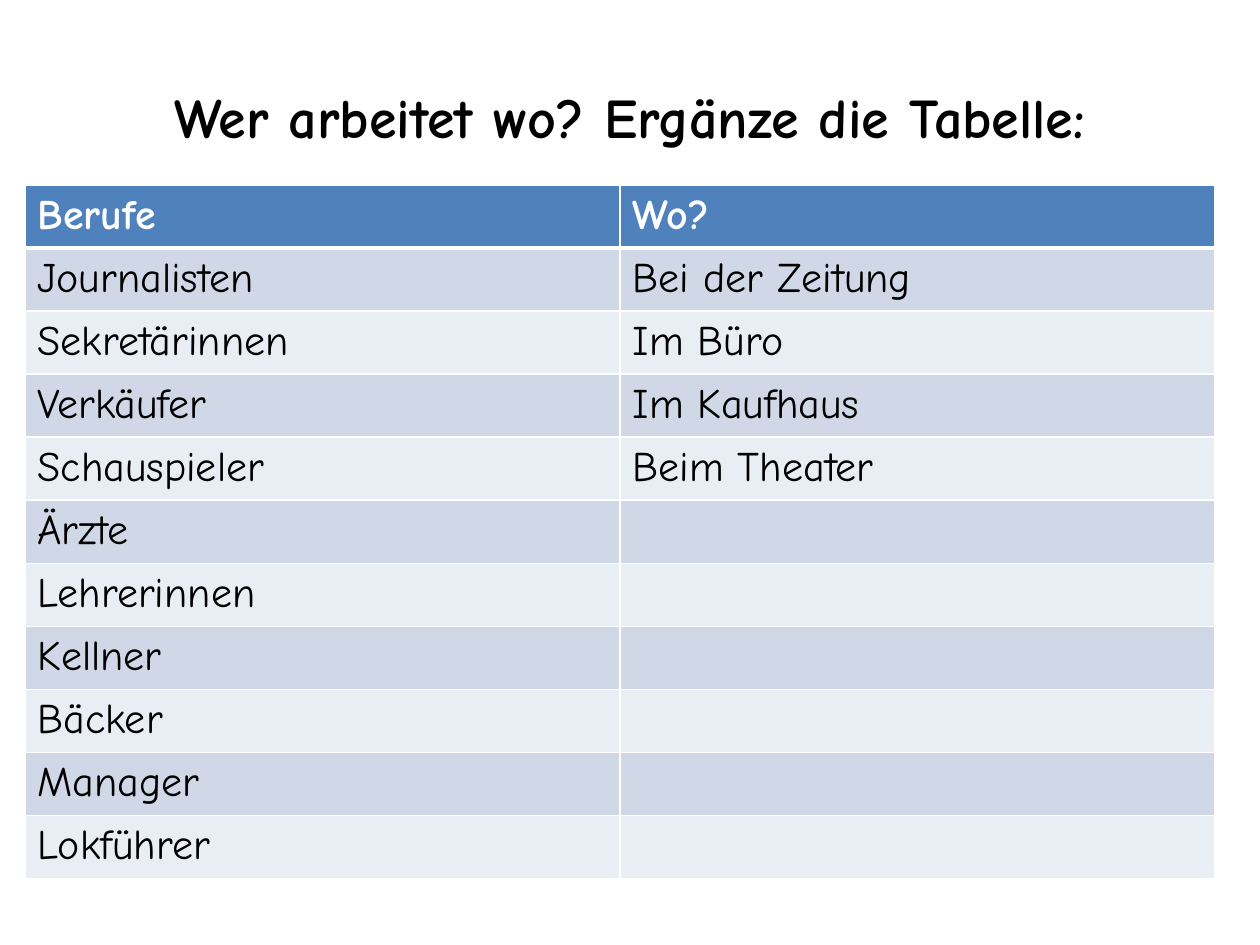
from typing import NamedTuple

from lxml import etree
from pptx import Presentation
from pptx.dml.color import RGBColor
from pptx.enum.text import MSO_ANCHOR, PP_ALIGN
from pptx.oxml.ns import qn
from pptx.util import Pt

CENTER = PP_ALIGN.CENTER
MIDDLE = MSO_ANCHOR.MIDDLE
EMU_PER_PX = 914400 / 126
FONT = "Comic Neue"
BLACK, WHITE = "000000", "FFFFFF"
HEADER_FILL = "4F81BD"
BAND_FILLS = ("D0D8E8", "E9EDF4")


class Box(NamedTuple):
    left: int
    top: int
    width: int
    height: int


class JobRow(NamedTuple):
    job: str
    workplace: str = ""


TITLE_BOX = Box(63, 38, 1134, 157)
TABLE_BOX = Box(25, 185, 1190, 674)
HEADER = JobRow("Berufe", "Wo?")
JOBS = (
    JobRow("Journalisten", "Bei der Zeitung"),
    JobRow("Sekretärinnen", "Im Büro"),
    JobRow("Verkäufer", "Im Kaufhaus"),
    JobRow("Schauspieler", "Beim Theater"),
    JobRow("Ärzte"),
    JobRow("Lehrerinnen"),
    JobRow("Kellner"),
    JobRow("Bäcker"),
    JobRow("Manager"),
    JobRow("Lokführer"),
)


def px(length: float) -> int:
    return round(length * EMU_PER_PX)


def color(value: str) -> RGBColor:
    return RGBColor.from_string(value)


def set_font(paragraph, size: int, font_color: str, bold: bool) -> None:
    font = paragraph.font
    font.name = FONT
    font.size = Pt(size)
    font.bold = bold
    font.color.rgb = color(font_color)


def add_title(slide, text: str, box: Box) -> None:
    shape = slide.shapes.add_textbox(*map(px, box))
    frame = shape.text_frame
    frame.word_wrap = True
    frame.vertical_anchor = MIDDLE
    paragraph = frame.paragraphs[0]
    paragraph.text = text
    paragraph.alignment = CENTER
    set_font(paragraph, 32, BLACK, True)


def set_borders(cell, top: int, bottom: int) -> None:
    properties = cell._tc.get_or_add_tcPr()
    for side, points in (("L", 1), ("R", 1), ("T", top), ("B", bottom)):
        line = etree.SubElement(properties, qn(f"a:ln{side}"), w=str(Pt(points)))
        fill = etree.SubElement(line, qn("a:solidFill"))
        etree.SubElement(fill, qn("a:srgbClr"), val=WHITE)


def add_job_table(slide, rows: tuple[JobRow, ...], box: Box) -> None:
    columns = len(JobRow._fields)
    table = slide.shapes.add_table(len(rows), columns, *map(px, box)).table
    for column in table.columns:
        column.width = px(box.width / columns)
    for row_index, row in enumerate(rows):
        is_header = row_index == 0
        table.rows[row_index].height = px(box.height / len(rows))
        for column_index, text in enumerate(row):
            cell = table.cell(row_index, column_index)
            set_borders(cell, 3 if row_index == 1 else 1, 3 if is_header else 1)
            cell.fill.solid()
            band = BAND_FILLS[(row_index - 1) % 2]
            cell.fill.fore_color.rgb = color(HEADER_FILL if is_header else band)
            paragraph = cell.text_frame.paragraphs[0]
            paragraph.text = text
            set_font(paragraph, 24, WHITE if is_header else BLACK, is_header)


def main() -> None:
    presentation = Presentation()
    presentation.slide_width = px(1260)
    presentation.slide_height = px(945)
    slide = presentation.slides.add_slide(presentation.slide_layouts[6])

    # Heading
    add_title(slide, "Wer arbeitet wo? Ergänze die Tabelle:", TITLE_BOX)

    # Jobs and workplaces
    add_job_table(slide, (HEADER, *JOBS), TABLE_BOX)

    presentation.save("out.pptx")


if __name__ == "__main__":
    main()
